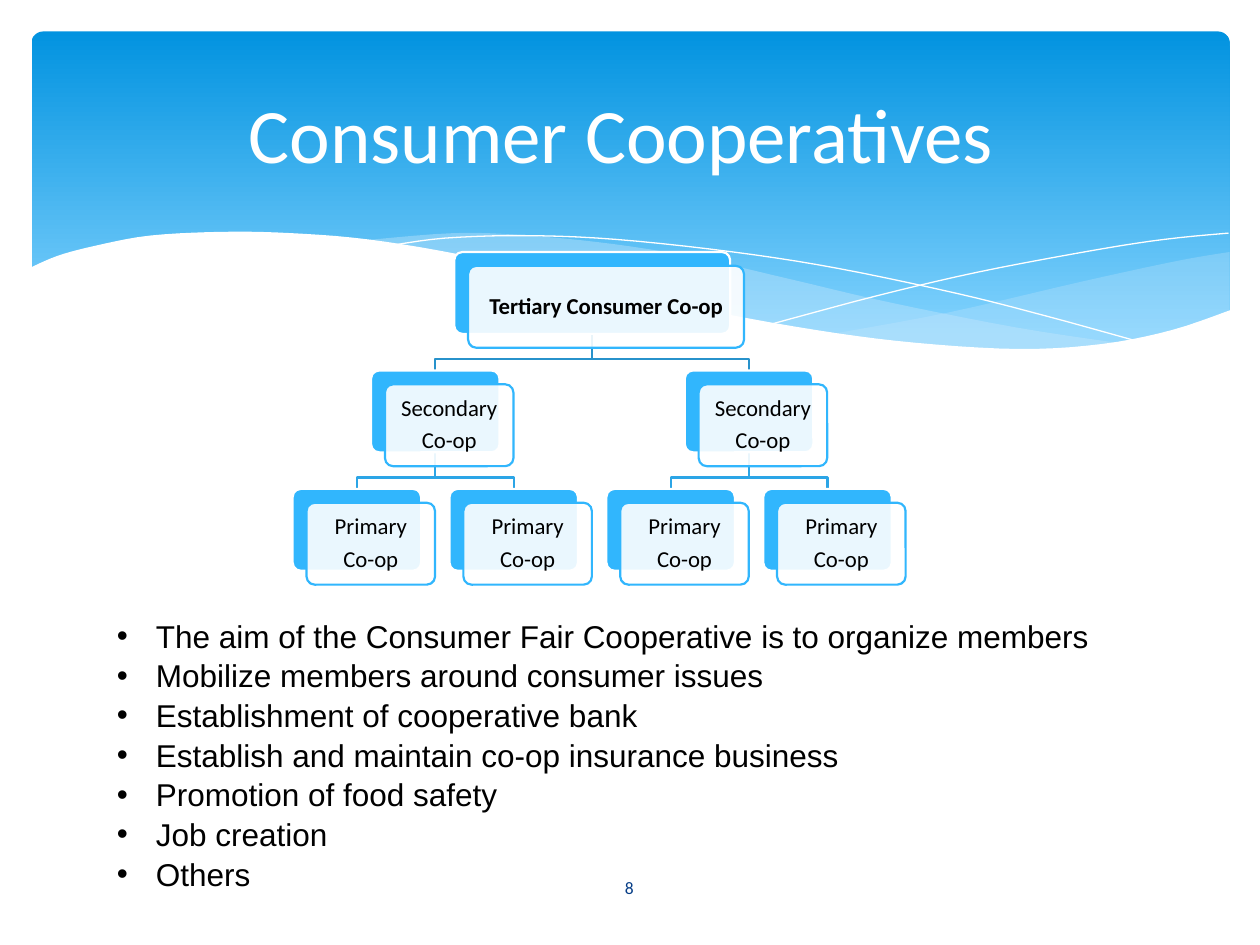
from lxml import etree
from pptx import Presentation
from pptx import util as u
from pptx.dml.color import RGBColor
from pptx.enum import shapes, text
from pptx.oxml.ns import qn

COLORS = {
    "white": "FFFFFF", "black": "000000", "sky_top": "0293E0", "sky_low": "83D3FE",
    "mist": "C6E7FC", "node": "31B6FD", "link_top": "2792CB", "link_low": "2CA5E6",
    "number": "073E87",
}
BAND_LOWER = [
    [(9.76, 2), (9.35, 2.07), (8.61, 2.23), (7.53, 2.48), (6.61, 2.65)],
    [(6.61, 2.65), (7.19, 2.72), (7.69, 2.77), (8.14, 2.78), (8.63, 2.75),
     (9.13, 2.67), (9.49, 2.57), (9.76, 2.47)],
]
BAND_UPPER = [
    [(8.93, 2.73), (8.07, 2.6), (7.06, 2.4), (6.29, 2.22), (5.55, 2.05), (4.89, 1.94),
     (4.2, 1.87), (3.61, 1.85), (2.86, 1.91)],
    [(2.86, 1.91), (3.62, 2.03), (4.49, 2.22), (5.66, 2.48), (6.5, 2.64), (7.22, 2.74),
     (7.85, 2.78), (8.38, 2.78), (8.93, 2.73)],
]
STRAND_FALLING = [[(3.09, 1.95), (3.53, 1.89), (4.16, 1.87), (4.89, 1.9), (5.82, 2),
                   (6.65, 2.13), (7.6, 2.33), (8.31, 2.51), (9.07, 2.72)]]
STRAND_RISING = [[(6.13, 2.57), (6.95, 2.35), (7.76, 2.16), (8.66, 1.99), (9.24, 1.9),
                  (9.75, 1.85)]]
PAGE_EDGE = [
    [(9.77, 2.46), (9.3, 2.62), (8.75, 2.73), (8.09, 2.77), (7.26, 2.72), (6.48, 2.62),
     (5.55, 2.45), (4.47, 2.2), (3.65, 2.02), (2.92, 1.9), (2.3, 1.85), (1.77, 1.84),
     (1.19, 1.87), (0.76, 1.95), (0.46, 2.03), (0.23, 2.13)],
    [(0.23, 3.29), (9.77, 3.29)],
]
LEVELS = [
    (["Tertiary Consumer Co-op"], 1, 2.19, True),
    (["Secondary", "Co-op"], 2, 1.02, False),
    (["Primary", "Co-op"], 4, 1.02, False),
]
AIMS = [
    "The aim of the Consumer Fair Cooperative is to organize members",
    "Mobilize members around consumer issues",
    "Establishment of cooperative bank",
    "Establish and maintain co-op insurance business",
    "Promotion of food safety",
    "Job creation",
    "Others",
]


def rgb(name):
    return RGBColor.from_string(COLORS[name])


def apply(obj, fmt):
    for key, value in fmt.items():
        setattr(obj, key, value)


def inches(box):
    return [u.Inches(v) for v in box]


def paint(sp, fill=None, alpha=100, line=None, width=1.25):
    sp.shadow.inherit = False
    if fill:
        sp.fill.solid()
        sp.fill.fore_color.rgb = rgb(fill)
        if alpha < 100:
            clr = sp.fill._xPr.find(qn("a:solidFill"))[0]
            etree.SubElement(clr, qn("a:alpha"), val=str(alpha * 1000))
    else:
        sp.fill.background()
    if line:
        sp.line.color.rgb = rgb(line)
        sp.line.width = u.Pt(width)
    else:
        sp.line.fill.background()


def write(tf, lines, font, para, frame):
    apply(tf, {"word_wrap": True, **frame})
    for i, line in enumerate(lines):
        p = tf.paragraphs[0] if i == 0 else tf.add_paragraph()
        apply(p, para)
        r = p.add_run()
        r.text = line
        apply(r.font, {k: v for k, v in font.items() if k != "color"})
        r.font.color.rgb = rgb(font["color"])
    return tf


def smooth(knots, steps=5):
    if len(knots) < 3:
        return knots
    ends = [knots[0], *knots, knots[-1]]
    points = [knots[0]]
    for a, b, c, d in zip(ends, ends[1:], ends[2:], ends[3:]):
        for t in (n / steps for n in range(1, steps + 1)):
            points.append(tuple(
                (2 * q + (s - p) * t + (2 * p - 5 * q + 4 * s - v) * t ** 2
                 + (3 * q - p - 3 * s + v) * t ** 3) / 2
                for p, q, s, v in zip(a, b, c, d)))
    return points


def outline(s, curves, close, **look):
    points = [inches(pt) for curve in curves for pt in smooth(curve)]
    builder = s.shapes.build_freeform(*points[0])
    builder.add_line_segments(points[1:], close=close)
    paint(builder.convert_to_shape(), **look)


def add_backdrop(s, box):
    sky = s.shapes.add_shape(shapes.MSO_SHAPE.ROUNDED_RECTANGLE, *inches(box))
    sky.adjustments[0] = 0.034
    paint(sky)
    sky.fill.gradient()
    sky.fill.gradient_angle = 270
    for stop, color, pos in zip(sky.fill.gradient_stops, ("sky_top", "sky_low"), (0, 0.9)):
        stop.color.rgb = rgb(color)
        stop.position = pos
    outline(s, BAND_LOWER, True, fill="mist", alpha=29)
    outline(s, BAND_UPPER, True, fill="mist", alpha=40)
    for strand in (STRAND_FALLING, STRAND_RISING):
        outline(s, strand, False, line="white", width=0)
    outline(s, PAGE_EDGE, True, fill="white")


def add_title(s, box):
    sp = s.shapes.title
    s.shapes._spTree.append(sp._element)
    apply(sp, dict(zip(("left", "top", "width", "height"), inches(box))))
    write(sp.text_frame, ["Consumer Cooperatives "],
          {"name": "Calibri", "size": u.Pt(44), "color": "white"},
          {"alignment": text.PP_ALIGN.CENTER},
          {"vertical_anchor": text.MSO_ANCHOR.MIDDLE})


def add_node(s, x, y, w, h, lines, bold):
    for shift, look in ((0, {"fill": "node", "line": "white"}),
                        (0.11, {"fill": "white", "alpha": 90, "line": "node"})):
        sp = s.shapes.add_shape(shapes.MSO_SHAPE.ROUNDED_RECTANGLE,
                                *inches((x + shift, y + shift, w, h)))
        sp.adjustments[0] = 0.1
        paint(sp, **look)
    sides = ("margin_left", "margin_top", "margin_right", "margin_bottom")
    write(sp.text_frame, lines,
          {"name": "Calibri", "size": u.Pt(13), "bold": bold, "color": "black"},
          {"alignment": text.PP_ALIGN.CENTER, "line_spacing": 0.9, "space_after": u.Pt(4.5)},
          {"vertical_anchor": text.MSO_ANCHOR.MIDDLE, **dict.fromkeys(sides, u.Inches(0.06))})


def add_tree(s, box, node_h=0.65, step=0.94):
    left, top, width, _ = box

    def center(i, count):
        return left + width * (i + 0.5) / count

    for row, color in ((2, "link_low"), (1, "link_top")):
        count = LEVELS[row][1]
        y = top + row * step
        for i in range(count):
            x, parent = center(i, count), center(i // 2, count // 2)
            bends = [(parent, y - step + node_h), (parent, y - 0.09), (x, y - 0.09), (x, y)]
            outline(s, [[pt] for pt in bends], False, line=color)
    for row, (lines, count, w, bold) in enumerate(LEVELS):
        for i in range(count):
            add_node(s, center(i, count) - w / 2, top + row * step, w, node_h, lines, bold)


def add_aims(s, box):
    tf = s.shapes.add_textbox(*inches(box)).text_frame
    write(tf, AIMS, {"name": "Arial", "size": u.Pt(18), "color": "black"},
          {"line_spacing": 1.05}, {})
    for p in tf.paragraphs:
        pPr = p._p.get_or_add_pPr()
        pPr.set("marL", str(u.Inches(0.31)))
        pPr.set("indent", str(u.Inches(-0.31)))
        etree.SubElement(pPr, qn("a:buFont"), typeface="Arial")
        etree.SubElement(pPr, qn("a:buChar"), char="•")


def add_number(s, box):
    write(s.shapes.add_textbox(*inches(box)).text_frame, ["8"],
          {"name": "Calibri", "size": u.Pt(10), "color": "number"},
          {"alignment": text.PP_ALIGN.CENTER},
          {"vertical_anchor": text.MSO_ANCHOR.MIDDLE})


def main():
    prs = Presentation()
    prs.slide_width, prs.slide_height = inches((10, 7.5))
    s = prs.slides.add_slide(prs.slide_layouts[5])
    add_backdrop(s, (0.25, 0.25, 9.51, 2.7))
    add_number(s, (4.36, 6.84, 1.27, 0.4))
    add_title(s, (0.5, 0.37, 9, 1.37))
    add_aims(s, (0.83, 4.83, 8.33, 2.22))
    add_tree(s, (2.21, 2, 4.98, 2.64))
    prs.save("out.pptx")


if __name__ == "__main__":
    main()
